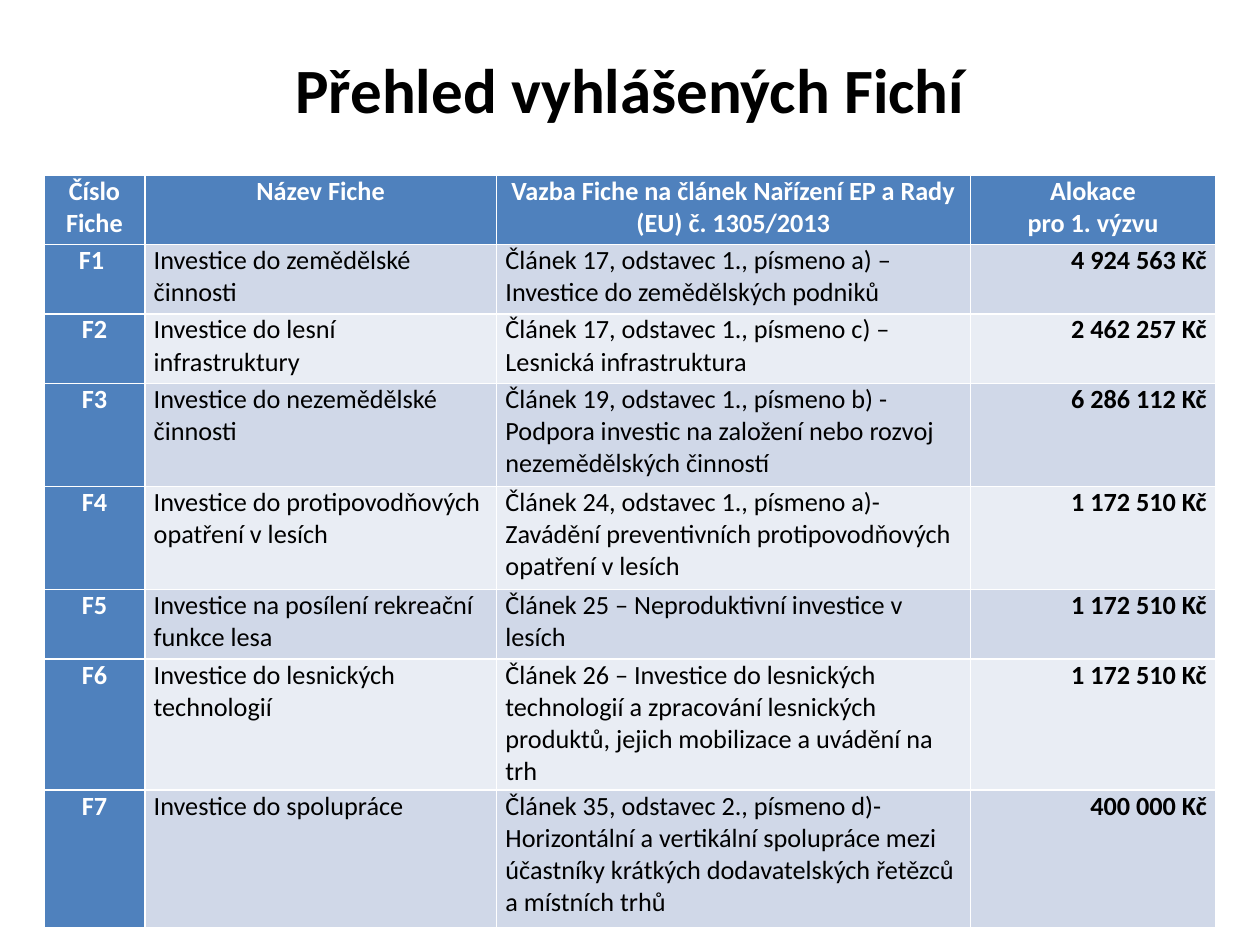
from pptx import Presentation
from pptx.dml.color import RGBColor
from pptx.enum.text import MSO_ANCHOR, PP_ALIGN as Align
from pptx.util import Cm, Pt

FONT = "Calibri"
BLACK, WHITE, BLUE = "000000", "FFFFFF", "4F81BD"
BANDS = ("D0D8E8", "E9EDF4")
COLUMN_WIDTHS = (2.03, 7.09, 9.55, 4.95)
ROW_HEIGHTS = (1.4, 1.4, 1.4, 2.08, 2.08, 1.4, 2.64, 2.77)
COLUMN_ALIGNMENTS = (Align.CENTER, Align.LEFT, Align.LEFT, Align.RIGHT)

HEADER = (
    "Číslo Fiche",
    "Název Fiche",
    "Vazba Fiche na článek Nařízení EP a Rady (EU) č. 1305/2013",
    "Alokace\npro 1. výzvu",
)
FICHES = (
    ("F1 ", "Investice do zemědělské činnosti",
     "Článek 17, odstavec 1., písmeno a) – Investice do zemědělských podniků",
     "4 924 563 Kč"),
    ("F2", "Investice do lesní infrastruktury",
     "Článek 17, odstavec 1., písmeno c) – Lesnická infrastruktura",
     "2 462 257 Kč"),
    ("F3", "Investice do nezemědělské činnosti",
     "Článek 19, odstavec 1., písmeno b) - Podpora investic na založení "
     "nebo rozvoj nezemědělských činností",
     "6 286 112 Kč"),
    ("F4", "Investice do protipovodňových opatření v lesích",
     "Článek 24, odstavec 1., písmeno a)- Zavádění preventivních "
     "protipovodňových opatření v lesích",
     "1 172 510 Kč"),
    ("F5", "Investice na posílení rekreační funkce lesa",
     "Článek 25 – Neproduktivní investice v lesích",
     "1 172 510 Kč"),
    ("F6", "Investice do lesnických technologií",
     "Článek 26 – Investice do lesnických technologií a zpracování "
     "lesnických produktů, jejich mobilizace a uvádění na trh",
     "1 172 510 Kč"),
    ("F7", "Investice do spolupráce",
     "Článek 35, odstavec 2., písmeno d)- Horizontální a vertikální spolupráce "
     "mezi účastníky krátkých dodavatelských řetězců a místních trhů",
     "400 000 Kč"),
)


def rgb(value):
    """Turn a hex string into a colour."""
    return RGBColor.from_string(value)


def write_text(text_frame, text, size, color, bold, alignment):
    """Write one paragraph for each line of the text."""
    for index, line in enumerate(text.split("\n")):
        paragraph = text_frame.add_paragraph() if index else text_frame.paragraphs[0]
        paragraph.alignment = alignment
        run = paragraph.add_run()
        run.text = line
        run.font.name = FONT
        run.font.size = Pt(size)
        run.font.bold = bold
        run.font.color.rgb = rgb(color)


def add_title(slide, text):
    """Place and fill the title placeholder."""
    title = slide.shapes.title
    title.left, title.top = Cm(1.27), Cm(0.41)
    title.width, title.height = Cm(22.86), Cm(2.72)
    title.text_frame.vertical_anchor = MSO_ANCHOR.MIDDLE
    write_text(title.text_frame, text, 36, BLACK, True, Align.CENTER)


def fill_cell(cell, text, fill, color, bold, alignment):
    """Set the margins, fill and text of one table cell."""
    cell.margin_left = cell.margin_right = Cm(0.18)
    cell.margin_top = cell.margin_bottom = Cm(0)
    cell.fill.solid()
    cell.fill.fore_color.rgb = rgb(fill)
    write_text(cell.text_frame, text, 15, color, bold, alignment)


def add_fiche_table(slide):
    """Add the table of fiches with its header row and number column."""
    rows = (HEADER, *FICHES)
    table = slide.shapes.add_table(
        len(rows), len(HEADER), Cm(0.89), Cm(3.53),
        Cm(sum(COLUMN_WIDTHS)), Cm(sum(ROW_HEIGHTS))).table
    table.first_col = True
    for column, width in zip(table.columns, COLUMN_WIDTHS):
        column.width = Cm(width)
    for row, height in zip(table.rows, ROW_HEIGHTS):
        row.height = Cm(height)
    for row_index, texts in enumerate(rows):
        for column_index, text in enumerate(texts):
            heading = row_index == 0 or column_index == 0
            fill_cell(
                table.cell(row_index, column_index), text,
                fill=BLUE if heading else BANDS[(row_index - 1) % 2],
                color=WHITE if heading else BLACK,
                bold=heading or column_index == len(HEADER) - 1,
                alignment=Align.CENTER if heading else COLUMN_ALIGNMENTS[column_index])


def main():
    """Build the slide and save it."""
    presentation = Presentation()
    presentation.slide_width, presentation.slide_height = Cm(25.4), Cm(19.05)
    slide = presentation.slides.add_slide(presentation.slide_layouts[5])
    add_title(slide, "Přehled vyhlášených Fichí")
    add_fiche_table(slide)
    presentation.save("out.pptx")


if __name__ == "__main__":
    main()
